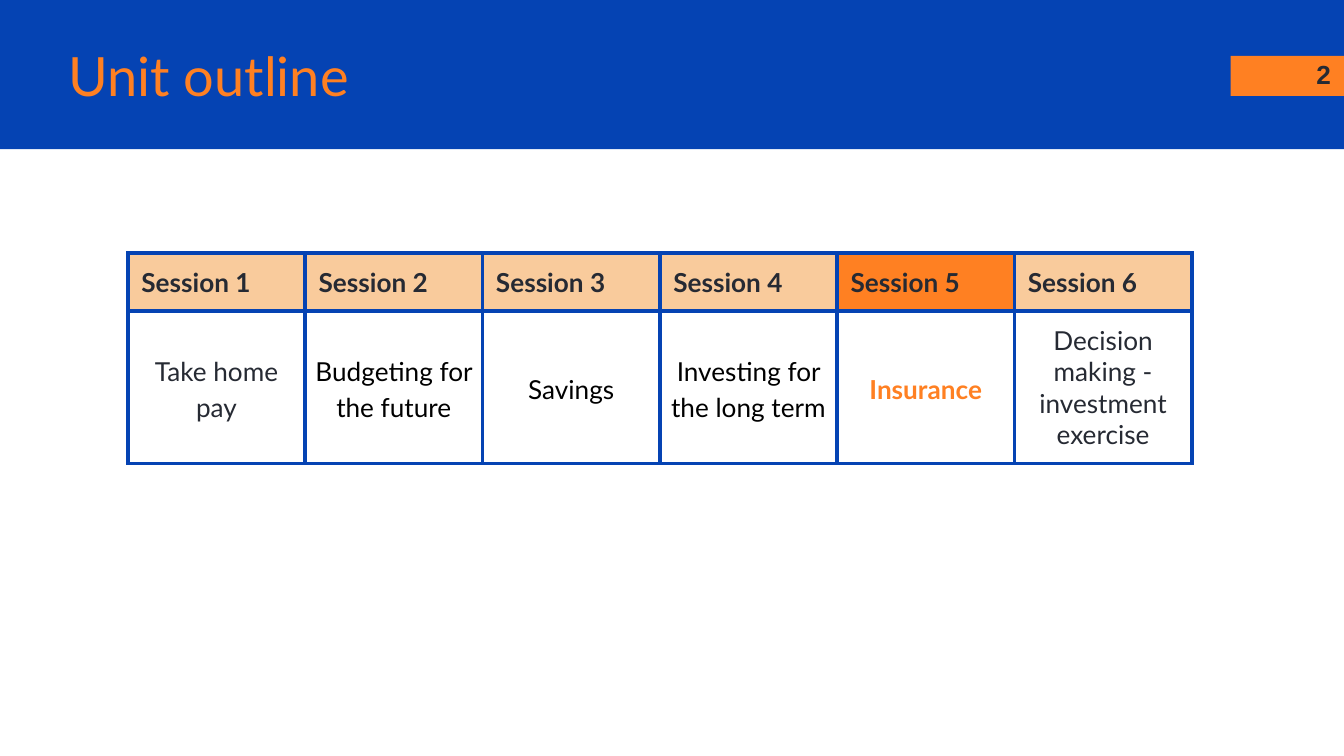
import pptx
import pptx.dml.color
import pptx.enum.shapes
import pptx.enum.text
import pptx.oxml
import pptx.oxml.ns
import pptx.util

Pt = pptx.util.Pt
ALIGN = pptx.enum.text.PP_ALIGN
ANCHOR = pptx.enum.text.MSO_ANCHOR

BLUE, ORANGE, PEACH = "0543B3", "FF8022", "F9CB9C"
DARK, BLACK, WHITE = "262A33", "000000", "FFFFFF"

TABLE_LEFT, TABLE_TOP = 68.5, 135.5
COLUMN_WIDTH = 95
ROW_HEIGHTS = (31.2, 81.6)

# Heading, heading fill, topic, topic format
SESSIONS = [
    ("Session 1", PEACH, "Take home pay", {"color": DARK}),
    ("Session 2", PEACH, "Budgeting for the future", {}),
    ("Session 3", PEACH, "Savings", {}),
    ("Session 4", PEACH, "Investing for the long term", {}),
    ("Session 5", ORANGE, "Insurance", {"color": ORANGE, "bold": True}),
    ("Session 6", PEACH, "Decision making - investment exercise",
     {"color": DARK, "spacing": 1.0, "inset": 7.2}),
]


def rgb(color):
    return pptx.dml.color.RGBColor.from_string(color)


def write_text(text_frame, text, size=14, font="Lato", color=BLACK, bold=False,
               align=ALIGN.LEFT, spacing=1.0):
    text_frame.word_wrap = True
    text_frame.text = text
    paragraph = text_frame.paragraphs[0]
    paragraph.alignment = align
    paragraph.line_spacing = spacing
    run_font = paragraph.runs[0].font
    run_font.size = Pt(size)
    run_font.name = font
    run_font.bold = bold
    run_font.color.rgb = rgb(color)


def set_margins(target, inset):
    target.margin_left = target.margin_right = Pt(inset)
    target.margin_top = target.margin_bottom = Pt(inset)


def add_block(slide, left, top, width, height, color):
    shape = slide.shapes.add_shape(
        pptx.enum.shapes.MSO_SHAPE.RECTANGLE, Pt(left), Pt(top), Pt(width), Pt(height))
    shape.shadow.inherit = False
    shape.fill.solid()
    shape.fill.fore_color.rgb = rgb(color)
    shape.line.fill.background()


def add_page_number(slide, text):
    text_frame = slide.shapes.add_textbox(Pt(677), Pt(24), Pt(43), Pt(31)).text_frame
    set_margins(text_frame, 7.2)
    write_text(text_frame, text, font="Arial", color=DARK, bold=True, align=ALIGN.RIGHT)


def place_title(slide, text):
    title = slide.shapes.title
    title.left, title.top, title.width, title.height = Pt(29.5), Pt(20), Pt(609), Pt(40)
    title.text_frame.auto_size = pptx.enum.text.MSO_AUTO_SIZE.NONE
    title.text_frame.vertical_anchor = ANCHOR.MIDDLE
    set_margins(title.text_frame, 7.2)
    write_text(title.text_frame, text, size=29, color=ORANGE)
    # Bring the title in front of the band
    title.element.getparent().append(title.element)


def add_borders(cell, color, width):
    properties = cell._tc.get_or_add_tcPr()
    for side in ("lnL", "lnR", "lnT", "lnB"):
        properties.append(pptx.oxml.parse_xml(
            f'<a:{side} {pptx.oxml.ns.nsdecls("a")} w="{Pt(width)}"><a:solidFill>'
            f'<a:srgbClr val="{color}"/></a:solidFill></a:{side}>'))


def format_cell(cell, text, fill, inset, anchor, **text_format):
    add_borders(cell, BLUE, 2.25)
    cell.fill.solid()
    cell.fill.fore_color.rgb = rgb(fill)
    cell.vertical_anchor = anchor
    set_margins(cell, inset)
    write_text(cell.text_frame, text, **text_format)


def add_session_table(slide):
    table = slide.shapes.add_table(
        len(ROW_HEIGHTS), len(SESSIONS), Pt(TABLE_LEFT), Pt(TABLE_TOP),
        Pt(COLUMN_WIDTH * len(SESSIONS)), Pt(sum(ROW_HEIGHTS))).table
    for row, height in zip(table.rows, ROW_HEIGHTS):
        row.height = Pt(height)
    for index, (heading, fill, topic, topic_format) in enumerate(SESSIONS):
        table.columns[index].width = Pt(COLUMN_WIDTH)
        format_cell(table.cell(0, index), heading, fill, 7.2, ANCHOR.TOP,
                    color=DARK, bold=True)
        options = {"inset": 5, "spacing": 1.15, **topic_format}
        format_cell(table.cell(1, index), topic, WHITE, anchor=ANCHOR.MIDDLE,
                    align=ALIGN.CENTER, **options)


def main():
    presentation = pptx.Presentation()
    presentation.slide_width, presentation.slide_height = Pt(720), Pt(405)
    slide = presentation.slides.add_slide(presentation.slide_layouts[5])

    # Header band with page number tab
    add_block(slide, 0, 0, 720, 80, BLUE)
    add_block(slide, 659.3, 30, 60.7, 21.5, ORANGE)
    add_page_number(slide, "2")
    place_title(slide, "Unit outline")

    # Session overview
    add_session_table(slide)
    presentation.save("out.pptx")


if __name__ == "__main__":
    main()
